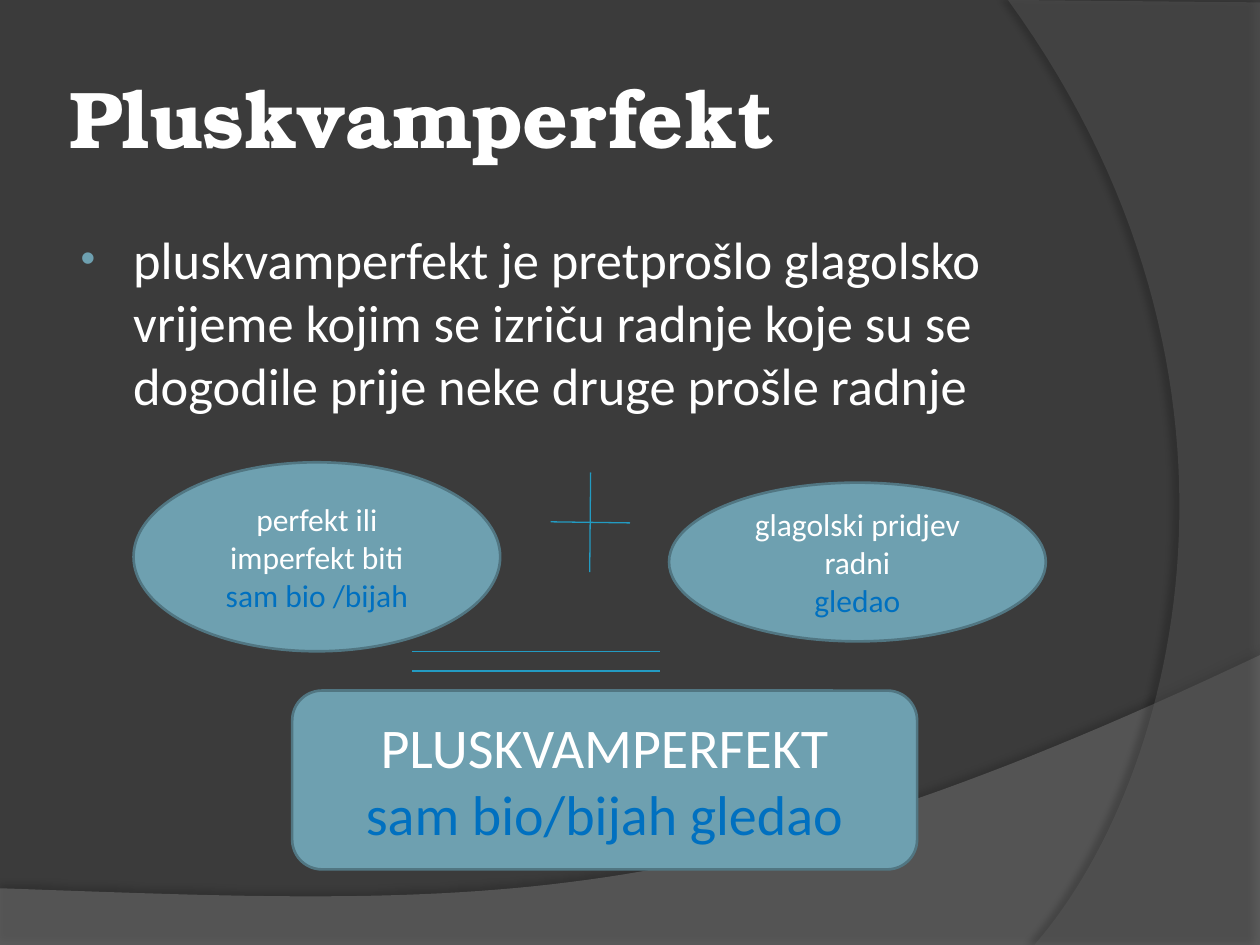
from dataclasses import dataclass

import pptx
import pptx.dml.color
import pptx.enum.shapes
import pptx.enum.text
import pptx.oxml.ns
import pptx.util
from lxml import etree

Pt = pptx.util.Pt
Shape = pptx.enum.shapes.MSO_SHAPE
Align = pptx.enum.text.PP_ALIGN
Anchor = pptx.enum.text.MSO_ANCHOR
qn = pptx.oxml.ns.qn

WHITE, BLUE, TEAL, TEAL_EDGE, STROKE = "FFFFFF", "0070C0", "6EA0B0", "517682", "239BC2"
Point = tuple[float, float]


@dataclass
class Bubble:
    kind: int
    box: tuple[float, float, float, float]
    rule: str
    example: str
    size: float


@dataclass
class Swoosh:
    curve: tuple[Point, Point, Point, Point]
    corners: list[Point]
    color: str
    opacity: int
    shadow_opacity: int
    shadow_distance: float
    shadow_angle: int


SWOOSHES = [
    Swoosh(((720, 374.4), (402.5, 524.9), (281.5, 517.7), (0, 507.6)),
           [(0, 540), (720, 540)], "7F7F7F", 45, 35, 3.5, 270),
    Swoosh(((591.1, 540), (673.2, 445.7), (733, 216), (576, 0)),
           [(720, 1.4), (720, 540)], "5E5E5E", 40, 45, 4, 180),
]
BUBBLES = [
    Bubble(Shape.OVAL, (76.3, 264.2, 209.5, 108),
           "perfekt ili imperfekt biti", "sam bio /bijah", 18),
    Bubble(Shape.OVAL, (382.3, 275.8, 215.3, 90.7),
           "glagolski pridjev radni", "gledao", 18),
    Bubble(Shape.ROUNDED_RECTANGLE, (167, 394.6, 357.1, 102.2),
           "PLUSKVAMPERFEKT", "sam bio/bijah gledao", 32),
]
PLUS = [(337.5, 270, 337, 327), (314.6, 298.2, 360, 298.8)]
EQUALS = [(235.4, y, 377.3, y) for y in (372.2, 383.4)]


def rgb(color: str):
    return pptx.dml.color.RGBColor.from_string(color)


def write(paragraph, text: str, *, size: float, color: str = WHITE, font: str = "Calibri",
          bold: bool = False, align=Align.LEFT) -> None:
    paragraph.alignment = align
    run = paragraph.add_run()
    run.text = text
    run.font.size, run.font.name, run.font.bold = Pt(size), font, bold
    run.font.color.rgb = rgb(color)


def add_color(parent, color: str, opacity: int) -> None:
    node = etree.SubElement(parent, qn("a:srgbClr"), val=color)
    etree.SubElement(node, qn("a:alpha"), val=str(opacity * 1000))


def bezier(curve, steps: int = 60) -> list[Point]:
    weights = [((1 - t) ** 3, 3 * t * (1 - t) ** 2, 3 * t * t * (1 - t), t ** 3)
               for t in (i / steps for i in range(steps + 1))]
    return [tuple(sum(w * p[axis] for w, p in zip(row, curve)) for axis in (0, 1))
            for row in weights]


def draw_swoosh(slide, swoosh: Swoosh) -> None:
    outline = [(Pt(x), Pt(y)) for x, y in bezier(swoosh.curve) + swoosh.corners]
    builder = slide.shapes.build_freeform(*outline[0])
    builder.add_line_segments(outline[1:], close=True)
    shape = builder.convert_to_shape()
    shape.line.fill.background()
    shape.fill.solid()
    shape.fill.fore_color.rgb = rgb(swoosh.color)
    fill_color = shape.element.spPr.find(qn("a:solidFill"))[0]
    etree.SubElement(fill_color, qn("a:alpha"), val=str(swoosh.opacity * 1000))
    shape.shadow.inherit = False
    shadow = etree.SubElement(
        shape.element.spPr.find(qn("a:effectLst")), qn("a:outerShdw"),
        blurRad=str(Pt(4)), dist=str(Pt(swoosh.shadow_distance)),
        dir=str(swoosh.shadow_angle * 60000), algn="ctr", rotWithShape="0")
    add_color(shadow, "000000", swoosh.shadow_opacity)


def draw_bubble(slide, bubble: Bubble) -> None:
    shape = slide.shapes.add_shape(bubble.kind, *map(Pt, bubble.box))
    shape.shadow.inherit = False
    shape.fill.solid()
    shape.fill.fore_color.rgb = rgb(TEAL)
    shape.line.color.rgb = rgb(TEAL_EDGE)
    shape.line.width = Pt(1.5)
    frame = shape.text_frame
    frame.word_wrap = True
    frame.vertical_anchor = Anchor.MIDDLE
    write(frame.paragraphs[0], bubble.rule, size=bubble.size, align=Align.CENTER)
    write(frame.add_paragraph(), bubble.example, size=bubble.size, color=BLUE,
          align=Align.CENTER)


def draw_stroke(slide, ends: tuple[float, float, float, float]) -> None:
    stroke = slide.shapes.add_connector(
        pptx.enum.shapes.MSO_CONNECTOR.STRAIGHT, *map(Pt, ends))
    stroke.line.color.rgb = rgb(STROKE)
    stroke.line.width = Pt(0.75)
    etree.SubElement(stroke.element.spPr, qn("a:effectLst"))


def draw_heading(slide) -> None:
    heading = slide.shapes.title
    heading.left, heading.top, heading.width, heading.height = map(Pt, (36, 21.6, 588, 90))
    frame = heading.text_frame
    frame.auto_size = pptx.enum.text.MSO_AUTO_SIZE.NONE
    frame.vertical_anchor = Anchor.MIDDLE
    frame.margin_left = frame.margin_right = Pt(3.6)
    frame.margin_top = frame.margin_bottom = Pt(3.6)
    write(frame.paragraphs[0], "Pluskvamperfekt", size=46, font="TeX Gyre Bonum", bold=True)
    # Bring the heading in front of the backdrop
    heading.element.getparent().append(heading.element)


def draw_definition(slide) -> None:
    definition = slide.shapes.add_textbox(*map(Pt, (36, 126, 588, 356.4)))
    frame = definition.text_frame
    frame.word_wrap = True
    paragraph = frame.paragraphs[0]
    write(paragraph, "pluskvamperfekt je pretprošlo glagolsko vrijeme kojim se izriču "
          "radnje koje su se dogodile prije neke druge prošle radnje", size=30)
    paragraph.space_before = Pt(6)
    layout = paragraph._p.get_or_add_pPr()
    layout.set("marL", str(Pt(33)))
    layout.set("indent", str(Pt(-30)))
    add_color(etree.SubElement(layout, qn("a:buClr")), TEAL, 100)
    etree.SubElement(layout, qn("a:buSzPct"), val="80000")
    etree.SubElement(layout, qn("a:buFont"), typeface="Arial")
    etree.SubElement(layout, qn("a:buChar"), char="•")


def main() -> None:
    deck = pptx.Presentation()
    deck.slide_width, deck.slide_height = Pt(720), Pt(540)
    slide = deck.slides.add_slide(deck.slide_layouts[5])

    # Backdrop
    slide.background.fill.solid()
    slide.background.fill.fore_color.rgb = rgb("3B3B3B")
    for swoosh in SWOOSHES:
        draw_swoosh(slide, swoosh)

    # Heading and definition
    draw_heading(slide)
    draw_definition(slide)

    # Formula: two parts, plus and equals signs, result
    for bubble in BUBBLES:
        draw_bubble(slide, bubble)
    for ends in PLUS + EQUALS:
        draw_stroke(slide, ends)

    deck.save("out.pptx")


if __name__ == "__main__":
    main()
